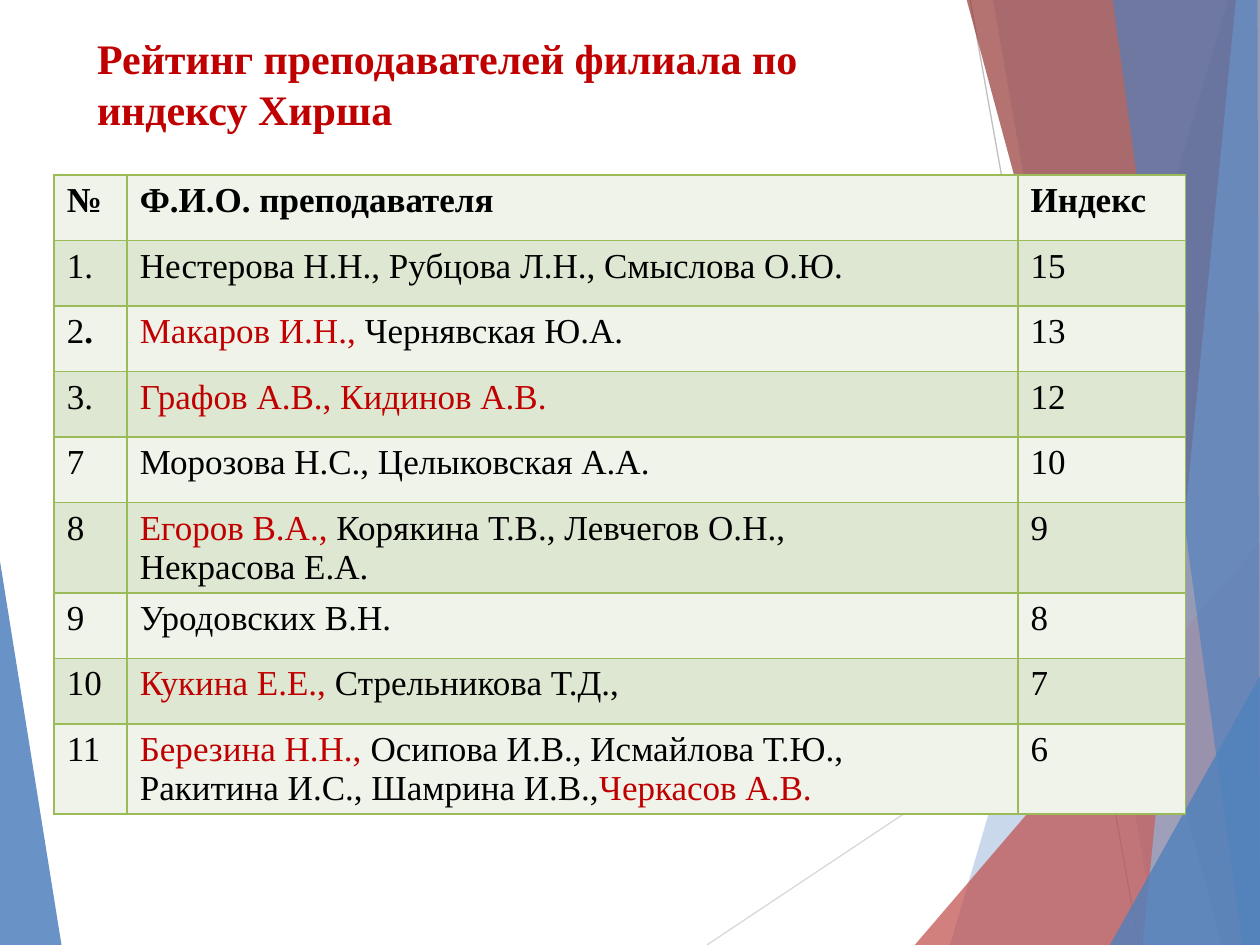
from dataclasses import dataclass

from lxml import etree
from pptx import Presentation
from pptx.dml.color import RGBColor
from pptx.enum.shapes import MSO_CONNECTOR
from pptx.enum.text import MSO_ANCHOR, PP_ALIGN
from pptx.oxml.ns import qn
from pptx.util import Inches, Pt

STRAIGHT = MSO_CONNECTOR.STRAIGHT
TOP = MSO_ANCHOR.TOP
LEFT = PP_ALIGN.LEFT

BLUE = RGBColor(0x4F, 0x81, 0xBD)
SKY = RGBColor(0x95, 0xB3, 0xD7)
ROSE = RGBColor(0xC0, 0x50, 0x4D)
WINE = RGBColor(0x95, 0x37, 0x35)
RED = RGBColor(0xC0, 0x00, 0x00)
BLACK = RGBColor(0x00, 0x00, 0x00)
GREEN = RGBColor(0x9B, 0xBB, 0x59)
PALE = RGBColor(0xEF, 0xF3, 0xEA)
SAGE = RGBColor(0xDE, 0xE7, 0xD1)
SILVER = RGBColor(0xD9, 0xD9, 0xD9)
GRAY = RGBColor(0xBF, 0xBF, 0xBF)

FONT = "Times New Roman"
EDGE = 10.01
BASE = 7.5
WIDTHS = (0.58, 7.07, 1.33)
HEIGHT = 0.52


@dataclass
class Band:
    points: list
    color: RGBColor
    alpha: int


@dataclass
class Ray:
    start: tuple
    end: tuple
    color: RGBColor


@dataclass
class Run:
    text: str
    color: RGBColor = BLACK
    bold: bool = False


@dataclass
class Entry:
    rank: list
    names: list
    score: Run


def beam(top: float, foot: float, color: RGBColor, alpha: int) -> Band:
    return Band([(top, -0.01), (foot, BASE), (EDGE, BASE), (EDGE, -0.01)], color, alpha)


def wedge(foot: float, top: float, color: RGBColor, alpha: int) -> Band:
    return Band([(foot, BASE), (EDGE, top), (EDGE, BASE)], color, alpha)


DECOR = [
    Band([(-0.01, 4.39), (0.49, 7.51), (-0.01, BASE)], BLUE, 85),
    Ray((5.61, BASE), (EDGE, 4.57), SILVER),
    Ray((7.7, 0), (9.04, BASE), GRAY),
    beam(9.75, 7.54, BLUE, 30),
    beam(7.88, 9.19, BLUE, 20),
    wedge(7.26, 4.29, ROSE, 72),
    beam(7.67, 9.7, WINE, 70),
    beam(9.81, 9.07, SKY, 70),
    Band([(8.83, -0.01), (9.86, BASE), (10, BASE), (9.98, -0.01)], BLUE, 65),
    wedge(8.81, 5.35, BLUE, 80),
]

ENTRIES = [
    Entry([Run("№", bold=True)], [[Run("Ф.И.О. преподавателя", bold=True)]],
          Run("Индекс", bold=True)),
    Entry([Run("1.")], [[Run("Нестерова Н.Н., Рубцова Л.Н., Смыслова О.Ю.")]], Run("15")),
    Entry([Run("2"), Run(".", bold=True)],
          [[Run("Макаров И.Н., ", RED), Run("Чернявская Ю.А.")]], Run("13")),
    Entry([Run("3.")], [[Run("Графов А.В., Кидинов А.В.", RED)]], Run("12")),
    Entry([Run("7")], [[Run("Морозова Н.С., Целыковская А.А.")]], Run("10")),
    Entry([Run("8")],
          [[Run("Егоров В.А., ", RED), Run("Корякина Т.В., Левчегов О.Н.,")],
           [Run("Некрасова Е.А.")]], Run("9")),
    Entry([Run("9")], [[Run("Уродовских В.Н.")]], Run("8")),
    Entry([Run("10")], [[Run("Кукина Е.Е., ", RED), Run("Стрельникова Т.Д.,")]], Run("7")),
    Entry([Run("11")],
          [[Run("Березина Н.Н., ", RED), Run("Осипова И.В., Исмайлова Т.Ю.,")],
           [Run("Ракитина И.С., Шамрина И.В.,"), Run("Черкасов А.В.", RED)]], Run("6")),
]


def draw_band(slide, band: Band) -> None:
    points = [(Inches(x), Inches(y)) for x, y in band.points]
    pen = slide.shapes.build_freeform(*points[0])
    pen.add_line_segments(points[1:], close=True)
    shape = pen.convert_to_shape()
    shape.shadow.inherit = False
    shape.fill.solid()
    shape.fill.fore_color.rgb = band.color
    shape.line.fill.background()
    tint = shape._element.spPr.find(qn("a:solidFill"))[0]
    etree.SubElement(tint, qn("a:alpha"), val=str(band.alpha * 1000))


def draw_ray(slide, ray: Ray) -> None:
    ends = [Inches(v) for v in ray.start + ray.end]
    line = slide.shapes.add_connector(STRAIGHT, *ends)
    line.line.color.rgb = ray.color
    line.line.width = Pt(0.75)
    etree.SubElement(line._element.spPr, qn("a:effectLst"))


def write(frame, paras: list, size: int) -> None:
    for i, runs in enumerate(paras):
        para = frame.add_paragraph() if i else frame.paragraphs[0]
        para.alignment = LEFT
        for part in runs:
            run = para.add_run()
            run.text = part.text
            run.font.name = FONT
            run.font.size = Pt(size)
            run.font.bold = part.bold
            run.font.color.rgb = part.color


def frame_cell(cell) -> None:
    props = cell._tc.get_or_add_tcPr()
    for side in ("L", "R", "T", "B"):
        edge = etree.SubElement(props, qn(f"a:ln{side}"), w=str(Pt(1)))
        fill = etree.SubElement(edge, qn("a:solidFill"))
        etree.SubElement(fill, qn("a:srgbClr"), val=str(GREEN))


def draw_table(slide, entries: list) -> None:
    table = slide.shapes.add_table(
        len(entries), len(WIDTHS), Inches(0.43), Inches(1.39),
        Inches(sum(WIDTHS)), Inches(HEIGHT * len(entries))).table
    for col, width in zip(table.columns, WIDTHS):
        col.width = Inches(width)
    for i, entry in enumerate(entries):
        table.rows[i].height = Inches(HEIGHT)
        for j, paras in enumerate(([entry.rank], entry.names, [[entry.score]])):
            cell = table.cell(i, j)
            frame_cell(cell)
            cell.fill.solid()
            cell.fill.fore_color.rgb = SAGE if i % 2 else PALE
            write(cell.text_frame, paras, 20)


def draw_title(slide, text: str) -> None:
    title = slide.shapes.title
    title.left, title.top = Inches(0.67), Inches(0.21)
    title.width, title.height = Inches(7.03), Inches(1.18)
    title.text_frame.word_wrap = True
    title.text_frame.vertical_anchor = TOP
    write(title.text_frame, [[Run(text, RED, True)]], 24)


def main() -> None:
    deck = Presentation()
    deck.slide_width, deck.slide_height = Inches(10), Inches(7.5)
    slide = deck.slides.add_slide(deck.slide_layouts[5])
    for item in DECOR:
        if isinstance(item, Band):
            draw_band(slide, item)
        else:
            draw_ray(slide, item)
    draw_title(slide, "Рейтинг преподавателей филиала по индексу Хирша")
    draw_table(slide, ENTRIES)
    deck.save("out.pptx")


if __name__ == "__main__":
    main()
